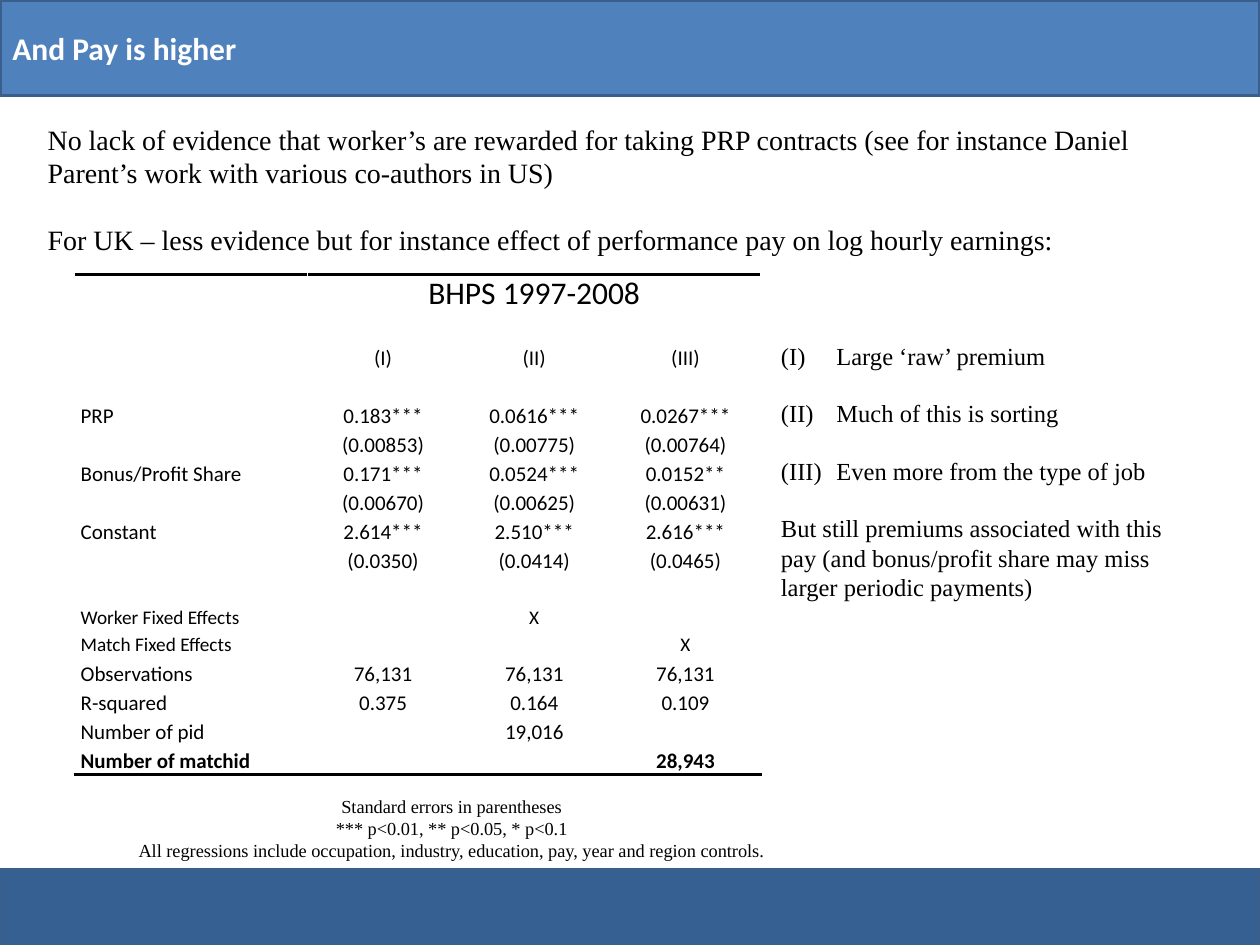
from pptx import Presentation
from pptx.dml.color import RGBColor
from pptx.enum.shapes import MSO_SHAPE as Shape
from pptx.enum.text import MSO_ANCHOR as Anchor, PP_ALIGN as Align
from pptx.oxml.xmlchemy import OxmlElement as Element
from pptx.util import Inches, Pt

SERIF, SANS = "Times New Roman", "Calibri"
COLUMNS = [1.85, 1.2, 1.2, 1.2]
ROW, SMALL_ROW, TITLE_ROW = 0.23, 0.21, 0.3
BLANK = ("", "", "", "")
RESULTS = [
    ("", "BHPS 1997-2008", "", ""),
    BLANK,
    ("", "(I)", "(II)", "(III)"),
    BLANK,
    ("PRP", "0.183***", "0.0616***", "0.0267***"),
    ("", "(0.00853)", "(0.00775)", "(0.00764)"),
    ("Bonus/Profit Share", "0.171***", "0.0524***", "0.0152**"),
    ("", "(0.00670)", "(0.00625)", "(0.00631)"),
    ("Constant", "2.614***", "2.510***", "2.616***"),
    ("", "(0.0350)", "(0.0414)", "(0.0465)"),
    BLANK,
    ("Worker Fixed Effects", "", "X", ""),
    ("Match Fixed Effects", "", "", "X"),
    ("Observations", "76,131", "76,131", "76,131"),
    ("R-squared", "0.375", "0.164", "0.109"),
    ("Number of pid", "", "19,016", ""),
    ("Number of matchid", "", "", "28,943"),
]
LAST = len(RESULTS) - 1
SIZES = {0: 18, 11: 11, 12: 11}
HEIGHTS = {0: TITLE_ROW, 11: SMALL_ROW}
INTRO = [
    "No lack of evidence that worker’s are rewarded for taking PRP contracts "
    "(see for instance Daniel Parent’s work with various co-authors in US)",
    "For UK – less evidence but for instance effect of performance pay on log hourly earnings:",
]
NOTES = [
    "Standard errors in parentheses",
    "*** p<0.01, ** p<0.05, * p<0.1",
    "All regressions include occupation, industry, education, pay, year and region controls.",
]
FINDINGS = [
    "Large ‘raw’ premium",
    "Much of this is sorting",
    "Even more from the type of job",
    "But still premiums associated with this pay "
    "(and bonus/profit share may miss larger periodic payments)",
]


def colour(value):
    return RGBColor.from_string(value)


def style(target, formats):
    for name, value in formats.items():
        setattr(target, name, value)


def write(paragraph, text, size, font=SERIF, ink="000000", bold=False):
    run = paragraph.add_run()
    run.text = text
    style(run.font, {"name": font, "size": Pt(size), "bold": bold})
    run.font.color.rgb = colour(ink)


def add_band(slide, box, fill, title=""):
    band = slide.shapes.add_shape(Shape.RECTANGLE, *map(Inches, box))
    band.shadow.inherit = False
    band.fill.solid()
    band.fill.fore_color.rgb = colour(fill)
    band.line.color.rgb = colour("3A5F8C")
    band.line.width = Pt(2)
    if title:
        band.text_frame.vertical_anchor = Anchor.MIDDLE
        heading = band.text_frame.paragraphs[0]
        heading.alignment = Align.LEFT
        write(heading, title, 18, SANS, "FFFFFF", True)


def add_text(slide, box, lines, size, gap=0, align=Align.LEFT, anchor=Anchor.TOP):
    frame = slide.shapes.add_textbox(*map(Inches, box)).text_frame
    style(frame, {"word_wrap": True, "vertical_anchor": anchor})
    for index, line in enumerate(lines):
        paragraph = frame.add_paragraph() if index else frame.paragraphs[0]
        style(paragraph, {"alignment": align, "space_before": Pt(gap if index else 0)})
        write(paragraph, line, size)
    return frame.paragraphs


def number(paragraph, indent):
    """Number a paragraph with a hanging Roman numeral in brackets."""
    properties = paragraph._p.get_or_add_pPr()
    properties.set("marL", str(Inches(indent)))
    properties.set("indent", str(-Inches(indent)))
    bullet = Element("a:buAutoNum")
    bullet.set("type", "romanUcParenBoth")
    properties.append(bullet)


def add_rule(cell, side):
    """Draw a black border on one side of a cell; borders precede the fill."""
    rule, fill, ink = Element(f"a:ln{side}"), Element("a:solidFill"), Element("a:srgbClr")
    rule.set("w", str(Pt(2)))
    ink.set("val", "000000")
    fill.append(ink)
    rule.append(fill)
    cell._tc.get_or_add_tcPr().insert(0, rule)


def fill_cell(cell, text, row, column):
    style(cell, {"margin_left": Inches(0.05), "margin_right": Inches(0.05),
                 "margin_top": 0, "margin_bottom": 0})
    cell.fill.solid()
    cell.fill.fore_color.rgb = colour("FFFFFF")
    paragraph = cell.text_frame.paragraphs[0]
    paragraph.alignment = Align.CENTER if column else Align.LEFT
    size = SIZES.get(row, 12)
    if text:
        paragraph.line_spacing = 1.15 if row else 1.0
        write(paragraph, text, size, SANS, bold=row == LAST)
    else:
        # Keeps an empty cell from stretching its row
        end = Element("a:endParaRPr")
        end.set("sz", str(min(size, 11) * 100))
        paragraph._p.append(end)
    if row in (0, LAST):
        add_rule(cell, "B" if row else "T")


def add_results(slide, box):
    table = slide.shapes.add_table(len(RESULTS), len(COLUMNS), *map(Inches, box)).table
    style(table, {"first_row": False, "horz_banding": False})
    for column, width in zip(table.columns, COLUMNS):
        column.width = Inches(width)
    for row, values in enumerate(RESULTS):
        table.rows[row].height = Inches(HEIGHTS.get(row, ROW))
        for column, text in enumerate(values):
            fill_cell(table.cell(row, column), text, row, column)
    table.cell(0, 1).merge(table.cell(0, 3))


def add_findings(slide, box):
    *numbered, _ = add_text(slide, box, FINDINGS, 14, gap=16, anchor=Anchor.MIDDLE)
    for paragraph in numbered:
        number(paragraph, 0.44)


def main():
    deck = Presentation()
    style(deck, {"slide_width": Inches(10), "slide_height": Inches(7.5)})
    slide = deck.slides.add_slide(deck.slide_layouts[6])

    # Introduction and bands
    add_text(slide, (0.28, 0.92, 8.98, 1.2), INTRO, 16, gap=19)
    add_band(slide, (0, 0, 10, 0.76), "4F81BD", "And Pay is higher")
    add_band(slide, (0, 6.9, 10, 0.6), "376092")

    # Regression results with notes and findings
    add_results(slide, (0.59, 2.18, 5.45, 3.94))
    add_text(slide, (0.28, 6.26, 6.61, 0.63), NOTES, 10.5, align=Align.CENTER)
    add_findings(slide, (6.1, 2.63, 3.54, 2.22))

    deck.save("out.pptx")


if __name__ == "__main__":
    main()
